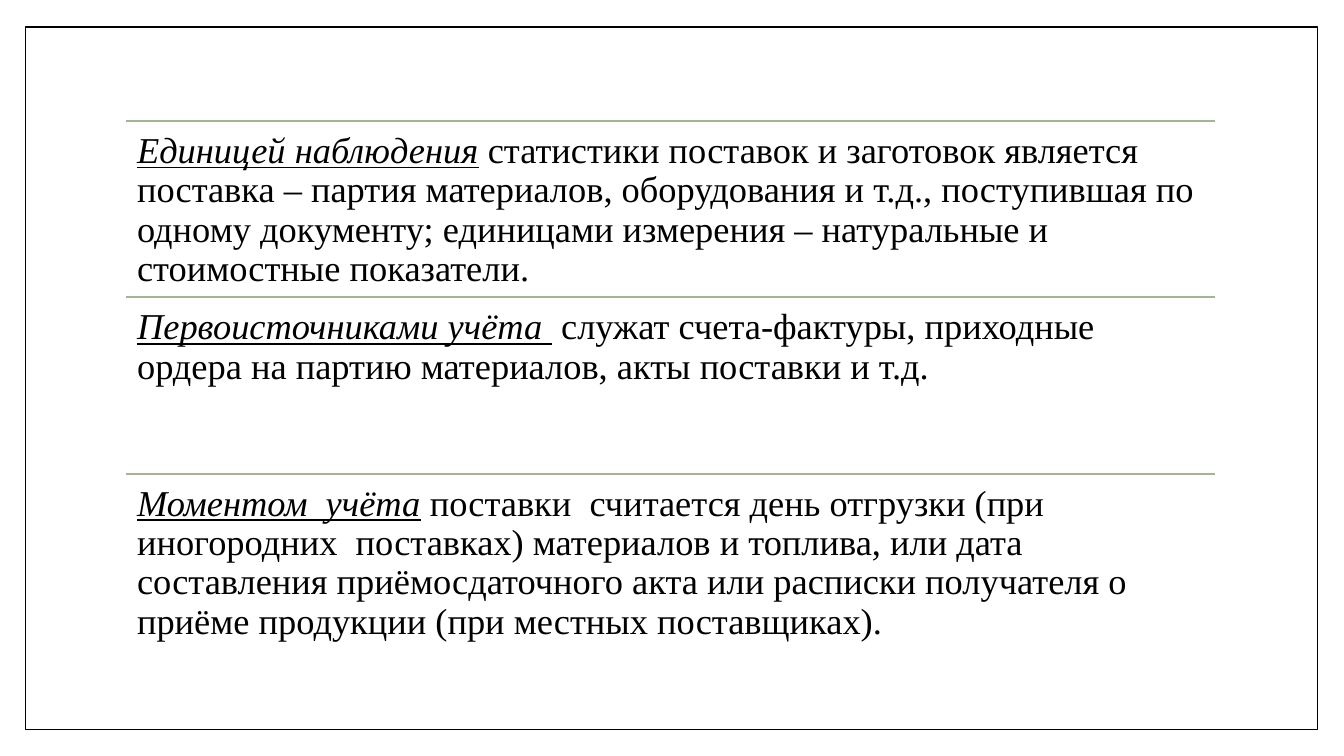
from lxml import etree
from pptx import Presentation
from pptx.dml.color import RGBColor
from pptx.enum.shapes import MSO_CONNECTOR, MSO_SHAPE
from pptx.enum.text import MSO_ANCHOR, PP_ALIGN
from pptx.oxml.ns import qn
from pptx.util import Inches, Pt

RECTANGLE = MSO_SHAPE.RECTANGLE
STRAIGHT = MSO_CONNECTOR.STRAIGHT
TOP = MSO_ANCHOR.TOP
LEFT = PP_ALIGN.LEFT

SLIDE_WIDTH, SLIDE_HEIGHT = 13.33, 7.5
FRAME_BOX = (0.25, 0.27, 12.82, 6.97)
LIST_BOX = (1.25, 1.2, 10.8, 5.25)
TEXT_INSET = 0.11
FONT_NAME, FONT_SIZE = "Times New Roman", 26
BLACK, WHITE, GREEN = "000000", "FFFFFF", "A5B592"

# Each entry: the underlined term and the rest of its sentence
DEFINITIONS = [
    ("Единицей наблюдения",
     " статистики поставок и заготовок является поставка – партия материалов, "
     "оборудования и т.д., поступившая по одному документу; единицами измерения – "
     "натуральные и стоимостные показатели."),
    ("Первоисточниками учёта ",
     " служат счета-фактуры, приходные ордера на партию материалов, "
     "акты поставки и т.д."),
    ("Моментом  учёта",
     " поставки  считается день отгрузки (при иногородних  поставках) материалов "
     "и топлива, или дата составления приёмосдаточного акта или расписки "
     "получателя о приёме продукции (при местных поставщиках)."),
]


def color(hex_string):
    return RGBColor.from_string(hex_string)


def add_frame(slide, box):
    """Thin black border around the slide."""
    frame = slide.shapes.add_shape(RECTANGLE, *map(Inches, box))
    frame.shadow.inherit = False
    frame.fill.solid()
    frame.fill.fore_color.rgb = color(WHITE)
    frame.line.color.rgb = color(BLACK)
    frame.line.width = Pt(1)


def add_rule(slide, left, top, width):
    """Green line above a definition."""
    rule = slide.shapes.add_connector(
        STRAIGHT, Inches(left), Inches(top), Inches(left + width), Inches(top))
    rule.line.color.rgb = color(GREEN)
    rule.line.width = Pt(1.5)
    etree.SubElement(rule._element.spPr, qn("a:effectLst"))


def add_definition(slide, box, term, explanation):
    """Text with its term in underlined italics."""
    text_frame = slide.shapes.add_textbox(*map(Inches, box)).text_frame
    text_frame.word_wrap = True
    text_frame.vertical_anchor = TOP
    text_frame.margin_left = text_frame.margin_right = Inches(TEXT_INSET)
    text_frame.margin_top = text_frame.margin_bottom = Inches(TEXT_INSET)
    paragraph = text_frame.paragraphs[0]
    paragraph.alignment = LEFT
    paragraph.line_spacing = 0.9
    for text, is_term in ((term, True), (explanation, False)):
        run = paragraph.add_run()
        run.text = text
        run.font.name = FONT_NAME
        run.font.size = Pt(FONT_SIZE)
        run.font.color.rgb = color(BLACK)
        run.font.italic = run.font.underline = is_term


def add_definition_list(slide, box):
    """Equal rows, each with a rule on top and a definition below."""
    left, top, width, height = box
    row_height = height / len(DEFINITIONS)
    for row, (term, explanation) in enumerate(DEFINITIONS):
        row_top = top + row * row_height
        add_rule(slide, left, row_top, width)
        add_definition(slide, (left, row_top, width, row_height), term, explanation)


def main():
    presentation = Presentation()
    presentation.slide_width = Inches(SLIDE_WIDTH)
    presentation.slide_height = Inches(SLIDE_HEIGHT)
    blank_layout = presentation.slide_layouts[6]
    slide = presentation.slides.add_slide(blank_layout)
    add_frame(slide, FRAME_BOX)
    add_definition_list(slide, LIST_BOX)
    presentation.save("out.pptx")


if __name__ == "__main__":
    main()
